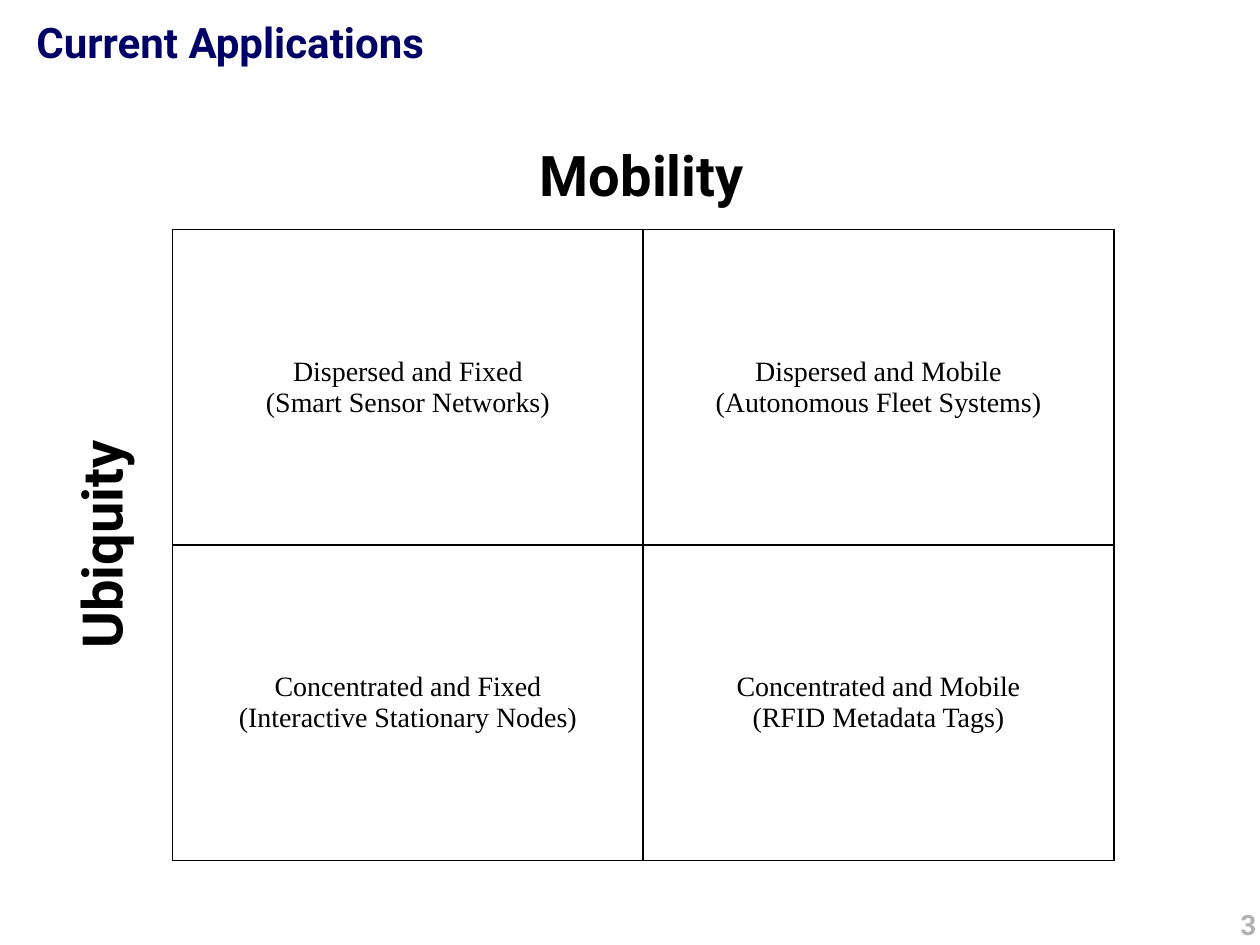
from pptx import Presentation
from pptx.dml.color import RGBColor
from pptx.enum.text import MSO_ANCHOR, PP_ALIGN
from pptx.oxml import parse_xml
from pptx.oxml.ns import nsdecls
from pptx.util import Inches, Pt

NAVY = RGBColor(0x00, 0x00, 0x66)
GREY = RGBColor(0xB2, 0xB2, 0xB2)
BLACK = RGBColor(0x00, 0x00, 0x00)
WHITE = RGBColor(0xFF, 0xFF, 0xFF)


def write(frame, text, size=32, font="Roboto", color=BLACK, bold=True,
          align=PP_ALIGN.CENTER, wrap=True):
    frame.word_wrap = wrap
    for i, line in enumerate(text.split("\n")):
        para = frame.add_paragraph() if i else frame.paragraphs[0]
        para.alignment = align
        run = para.add_run()
        run.text = line
        run.font.name = font
        run.font.size = Pt(size)
        run.font.bold = bold
        run.font.color.rgb = color


deck = Presentation()
deck.slide_width = Inches(10)
deck.slide_height = Inches(7.5)
slide = deck.slides.add_slide(deck.slide_layouts[6])

page = slide.shapes.add_textbox(Inches(6.9), Inches(7.15), Inches(3.17), Inches(0.5))
write(page.text_frame, "3", size=16, color=GREY, align=PP_ALIGN.RIGHT)

title = slide.shapes.add_textbox(Inches(0.19), Inches(0.08), Inches(9.71), Inches(1))
write(title.text_frame, "Current Applications", size=24, color=NAVY, align=PP_ALIGN.LEFT)

texts = [
    ["Dispersed and Fixed\n(Smart Sensor Networks)",
     "Dispersed and Mobile\n(Autonomous Fleet Systems)"],
    ["Concentrated and Fixed\n(Interactive Stationary Nodes)",
     "Concentrated and Mobile\n(RFID Metadata Tags)"],
]
grid = slide.shapes.add_table(2, 2, Inches(1.37), Inches(1.82), Inches(7.47), Inches(5.01)).table
grid.first_row = False
grid.horz_banding = False
for r, row in enumerate(texts):
    for c, text in enumerate(row):
        cell = grid.cell(r, c)
        cell.vertical_anchor = MSO_ANCHOR.MIDDLE
        cell.margin_left = cell.margin_right = Inches(0.09)
        cell.margin_top = cell.margin_bottom = Inches(0.04)
        write(cell.text_frame, text, size=16, font="Times New Roman", bold=False)
        props = cell._tc.get_or_add_tcPr()
        for side in ("lnL", "lnR", "lnT", "lnB"):
            props.append(parse_xml(
                f'<a:{side} {nsdecls("a")} w="{Pt(1)}"><a:solidFill>'
                f'<a:srgbClr val="{BLACK}"/></a:solidFill></a:{side}>'))
        cell.fill.solid()
        cell.fill.fore_color.rgb = WHITE

top = slide.shapes.add_textbox(Inches(4.16), Inches(1.07), Inches(1.87), Inches(0.64))
write(top.text_frame, "Mobility", wrap=False)

side = slide.shapes.add_textbox(Inches(0.48), Inches(3.38), Inches(0.74), Inches(1.88))
write(side.text_frame, "Ubiquity", wrap=False)
side.text_frame._txBody.bodyPr.set("vert", "vert270")

deck.save("out.pptx")
